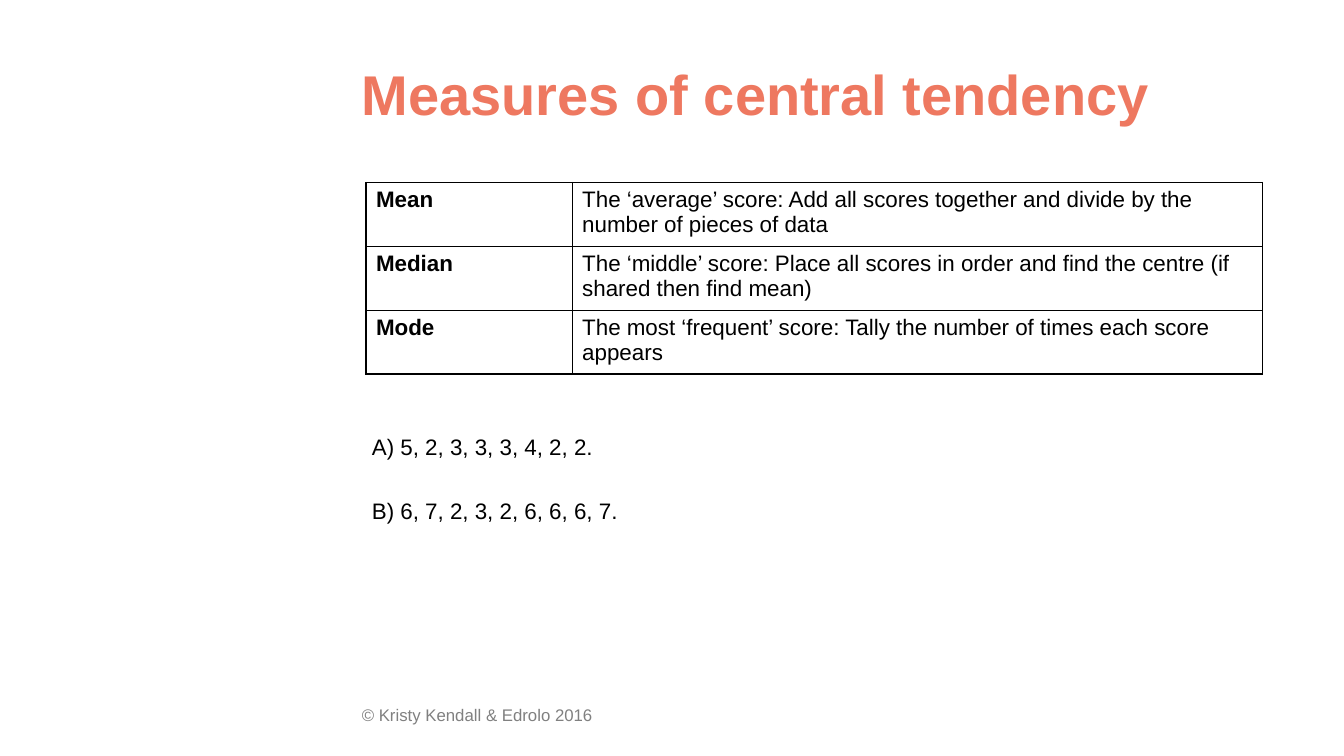
from lxml.etree import SubElement
from pptx import Presentation
from pptx.dml.color import RGBColor as Rgb
from pptx.enum.text import MSO_ANCHOR as Anchor
from pptx.oxml.ns import qn
from pptx.util import Inches, Pt

COLOURS = {"title": "EE7860", "text": "000000", "footer": "808080", "border": "000000"}
TITLE = {"size": Pt(40), "bold": True}
BODY = {"size": Pt(16), "bold": False}
TERM = {"size": Pt(16), "bold": True}
FOOTER = {"size": Pt(12), "bold": False}

MEASURES = [
    ("Mean", "The ‘average’ score: Add all scores together and divide by the number of pieces of data"),
    ("Median", "The ‘middle’ score: Place all scores in order and find the centre (if shared then find mean)"),
    ("Mode", "The most ‘frequent’ score: Tally the number of times each score appears"),
]
DATA_SETS = ["A) 5, 2, 3, 3, 3, 4, 2, 2.", "B) 6, 7, 2, 3, 2, 6, 6, 6, 7."]


def write(paragraph, wording, style, colour):
    paragraph.text = wording
    font = paragraph.font
    font.name = "Arial"
    font.color.rgb = Rgb.from_string(COLOURS[colour])
    for attribute, value in style.items():
        setattr(font, attribute, value)


def add_lines(slide, box, lines, style, colour, anchor=Anchor.TOP, gap=0):
    """Place a text box with one paragraph per line, gap points apart."""
    frame = slide.shapes.add_textbox(*map(Inches, box)).text_frame
    frame.word_wrap = True
    frame.vertical_anchor = anchor
    for index, line in enumerate(lines):
        paragraph = frame.add_paragraph() if index else frame.paragraphs[0]
        write(paragraph, line, style, colour)
        if index:
            paragraph.space_before = Pt(gap)


def outline(cell):
    properties = cell._tc.get_or_add_tcPr()
    for side in ("lnL", "lnR", "lnT", "lnB"):
        line = SubElement(properties, qn(f"a:{side}"), w=str(Pt(1)))
        fill = SubElement(line, qn("a:solidFill"))
        SubElement(fill, qn("a:srgbClr"), val=COLOURS["border"])
    cell.fill.background()


def add_measures(slide, box, term_share):
    """Place the table of terms and definitions; term_share is the first column's part of the width."""
    left, top, width, height = map(Inches, box)
    table = slide.shapes.add_table(len(MEASURES), 2, left, top, width, height).table
    table.first_row = table.horz_banding = False
    for column, share in zip(table.columns, (term_share, 1 - term_share)):
        column.width = int(width * share)
    for row, measure in enumerate(MEASURES):
        for column, (wording, style) in enumerate(zip(measure, (TERM, BODY))):
            cell = table.cell(row, column)
            outline(cell)
            write(cell.text_frame.paragraphs[0], wording, style, "text")


def main():
    deck = Presentation()
    deck.slide_width, deck.slide_height = Inches(13.33), Inches(7.5)
    slide = deck.slides.add_slide(deck.slide_layouts[6])
    add_lines(slide, (3.49, 6.94, 4.5, 0.4), ["© Kristy Kendall & Edrolo 2016"], FOOTER, "footer")
    add_lines(slide, (3.49, 0.3, 9.17, 1.25), ["Measures of central tendency"],
              TITLE, "title", Anchor.MIDDLE)
    add_lines(slide, (3.59, 4.25, 8.98, 1.25), DATA_SETS, BODY, "text", gap=26.6)
    add_measures(slide, (3.63, 1.81, 8.89, 1.78), 0.23)
    deck.save("out.pptx")


if __name__ == "__main__":
    main()
